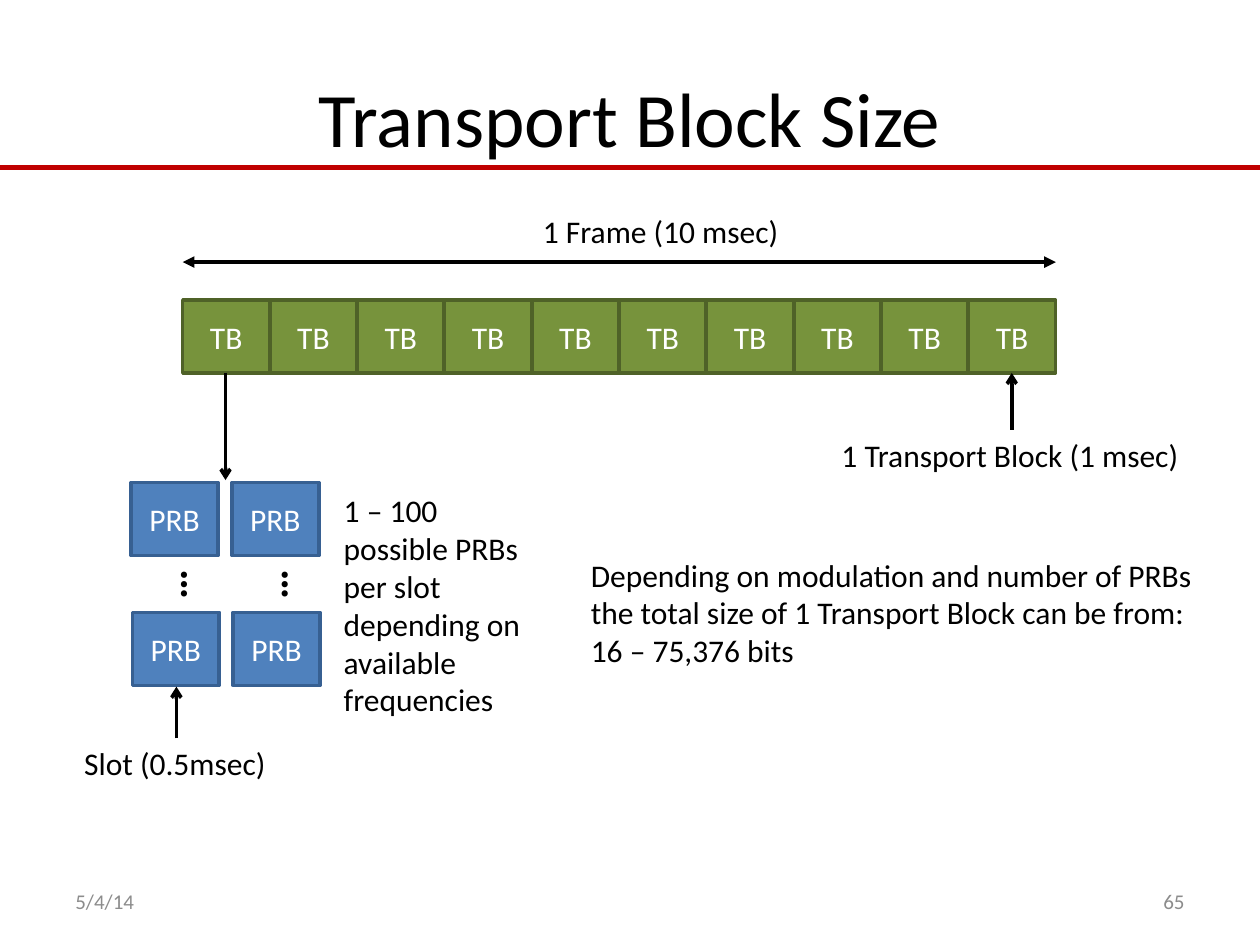
from typing import NamedTuple

from pptx import Presentation
from pptx import util as u
from pptx.dml.color import RGBColor
from pptx.enum import shapes, text
from pptx.oxml import ns, xmlchemy

FONT = "Calibri"
BLACK, WHITE, RED, GREY = "000000", "FFFFFF", "C00000", "8C8C8C"
LEFT, MID, RIGHT = text.PP_ALIGN.LEFT, text.PP_ALIGN.CENTER, text.PP_ALIGN.RIGHT
TOP, CENTRE = text.MSO_ANCHOR.TOP, text.MSO_ANCHOR.MIDDLE
BOX_W, BOX_H = 0.69, 0.58
SPAN_L, SPAN_R, COUNT = 1.45, 8.38, 10


class Block(NamedTuple):
    word: str
    fill: str
    edge: str


class Label(NamedTuple):
    at: tuple[float, float, float, float]
    lines: list[str]
    size: int = 18
    hue: str = BLACK
    bold: bool = False
    wrap: bool = False
    align: text.PP_ALIGN = LEFT
    anchor: text.MSO_ANCHOR = TOP
    turn: int = 0


class Line(NamedTuple):
    start: tuple[float, float]
    end: tuple[float, float]
    width: float = 2
    hue: str = BLACK
    head: str = ""
    tail: str = ""


TB = Block("TB", "77933C", "4F6228")
PRB = Block("PRB", "4F81BD", "376092")


def paint(hue: str) -> RGBColor:
    return RGBColor.from_string(hue)


def write(para, words: str, size: int, hue: str, bold: bool = False,
          align: text.PP_ALIGN = LEFT) -> None:
    para.alignment = align
    run = para.add_run()
    run.text = words
    run.font.name, run.font.size, run.font.bold = FONT, u.Pt(size), bold
    run.font.color.rgb = paint(hue)


def draw_block(slide, block: Block, x: float, y: float) -> None:
    box = slide.shapes.add_shape(
        shapes.MSO_SHAPE.RECTANGLE,
        *map(u.Inches, (x, y, BOX_W, BOX_H)))
    box.shadow.inherit = False
    box.fill.solid()
    box.fill.fore_color.rgb = paint(block.fill)
    box.line.color.rgb = paint(block.edge)
    box.line.width = u.Pt(2)
    box.text_frame.vertical_anchor = CENTRE
    write(box.text_frame.paragraphs[0], block.word, 18, WHITE, align=MID)


def draw_label(slide, label: Label) -> None:
    box = slide.shapes.add_textbox(*map(u.Inches, label.at))
    box.rotation = label.turn
    frame = box.text_frame
    frame.word_wrap = label.wrap
    frame.vertical_anchor = label.anchor
    for i, words in enumerate(label.lines):
        para = frame.add_paragraph() if i else frame.paragraphs[0]
        write(para, words, label.size, label.hue, label.bold, label.align)


def draw_line(slide, line: Line) -> None:
    link = slide.shapes.add_connector(
        shapes.MSO_CONNECTOR.STRAIGHT,
        *map(u.Inches, line.start + line.end))
    link.line.color.rgb = paint(line.hue)
    link.line.width = u.Pt(line.width)
    # Arrowheads follow the line's fill; the empty list turns the shadow off
    edge = link.line._get_or_add_ln()
    for tag, kind in (("a:headEnd", line.head), ("a:tailEnd", line.tail)):
        if kind:
            end = xmlchemy.OxmlElement(tag)
            end.set("type", kind)
            edge.append(end)
    link._element.find(ns.qn("p:spPr")).append(
        xmlchemy.OxmlElement("a:effectLst"))


def main() -> None:
    deck = Presentation()
    deck.slide_width, deck.slide_height = u.Inches(10), u.Inches(7.5)
    slide = deck.slides.add_slide(deck.slide_layouts[5])

    # Header and footer
    draw_line(slide, Line((0, 1.33), (10, 1.33), 3.25, RED))
    title = slide.shapes.title
    title.left, title.top, title.width, title.height = map(
        u.Inches, (0.5, 0.3, 9, 1.25))
    title.text_frame.vertical_anchor = CENTRE
    write(title.text_frame.paragraphs[0], "Transport Block Size", 44, BLACK,
          align=MID)
    for x, words, align in ((0.5, "5/4/14", LEFT), (7.17, "65", RIGHT)):
        draw_label(slide, Label((x, 6.95, 2.33, 0.4), [words], 12, GREY,
                                wrap=True, align=align, anchor=CENTRE))

    # Frame of ten transport blocks
    step = (SPAN_R - SPAN_L) / COUNT
    for i in range(COUNT):
        draw_block(slide, TB, SPAN_L + i * step, 2.38)

    # Two slots, each a column of resource blocks
    for x in (1.04, 1.84):
        draw_block(slide, PRB, x, 3.83)
        draw_block(slide, PRB, x + 0.01, 4.86)
        draw_label(slide, Label((x + 0.09, 4.39, 0.44, 0.5), ["…"], 24,
                                bold=True, turn=270))

    # Arrows: frame span, block pointer, block to slots, slot pointer
    for line in (
        Line((SPAN_L, 2.08), (SPAN_R, 2.08), 2.25, head="triangle",
             tail="triangle"),
        Line((8.03, 3.41), (8.03, 2.96), tail="arrow"),
        Line((1.79, 2.96), (1.79, 3.81), tail="arrow"),
        Line((1.4, 5.86), (1.4, 5.45), tail="arrow"),
    ):
        draw_line(slide, line)

    # Captions and notes
    for label in (
        Label((4.21, 1.63, 2.09, 0.4), ["1 Frame (10 msec)"]),
        Label((6.58, 3.41, 2.91, 0.4), ["1 Transport Block (1 msec)"]),
        Label((0.57, 5.86, 1.66, 0.4), ["Slot (0.5msec)"]),
        Label((2.63, 3.85, 1.64, 1.92),
              ["1 – 100 possible PRBs per slot depending on available "
               "frequencies"], wrap=True),
        Label((4.59, 4.36, 5.18, 1.01),
              ["Depending on modulation and number of PRBs the total size "
               "of 1 Transport Block can be from:", "16 – 75,376 bits"],
              wrap=True),
    ):
        draw_label(slide, label)

    deck.save("out.pptx")


if __name__ == "__main__":
    main()
